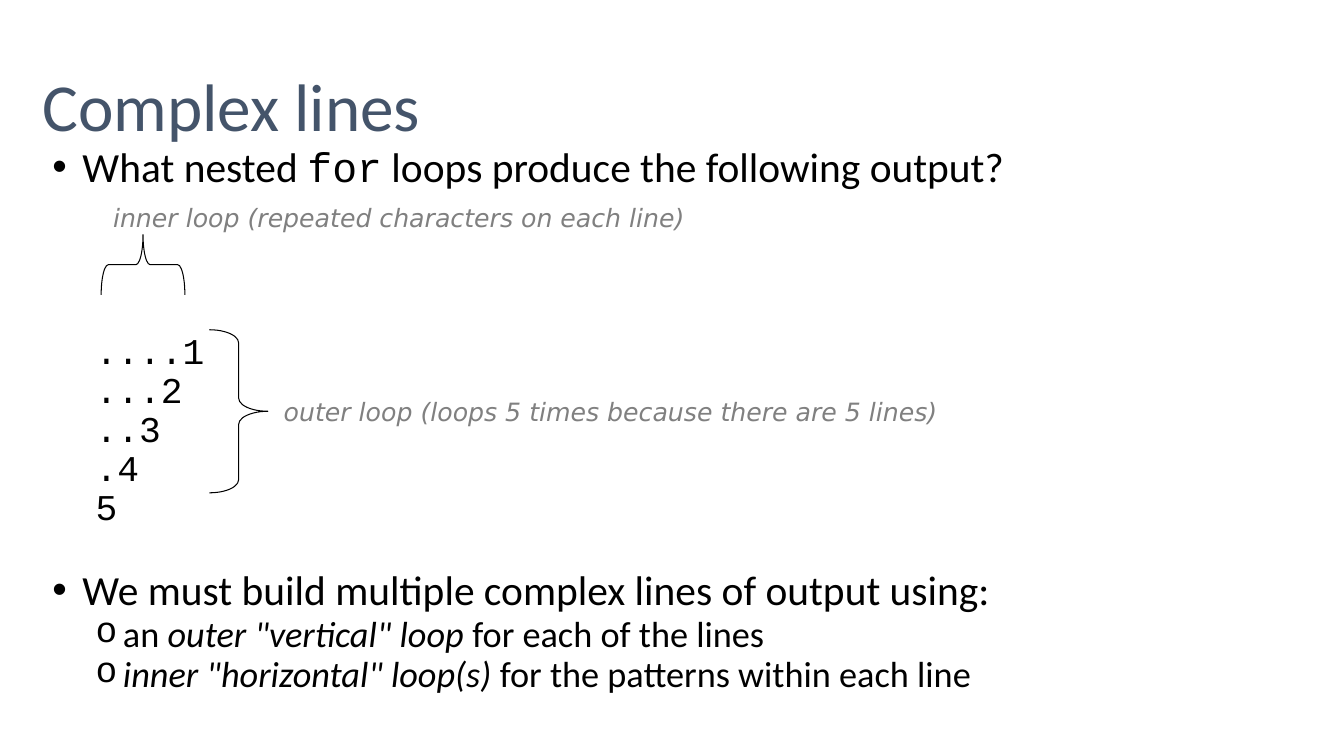
from dataclasses import dataclass

from lxml import etree
from pptx import Presentation
from pptx import util as u
from pptx.dml.color import RGBColor
from pptx.enum import shapes, text
from pptx.oxml.ns import qn


@dataclass(frozen=True)
class Theme:
    heading: RGBColor = RGBColor(0x44, 0x54, 0x6A)
    ink: RGBColor = RGBColor(0, 0, 0)
    note: RGBColor = RGBColor(0x80, 0x80, 0x80)
    body_font: str = "Calibri"
    code_font: str = "Courier New"
    note_font: str = "DejaVu Sans"
    title_size: float = 48
    bullet_size: float = 29.6
    detail_size: float = 25.9
    note_size: float = 18


THEME = Theme()


def add_text_frame(slide, left, top, width, height):
    frame = slide.shapes.add_textbox(
        u.Cm(left), u.Cm(top), u.Cm(width), u.Cm(height)).text_frame
    frame.word_wrap = True
    return frame


def style(paragraph, font, size, color):
    paragraph.font.name = font
    paragraph.font.size = u.Pt(size)
    paragraph.font.color.rgb = color


def set_indent(paragraph, margin, hanging, bullet=None, bullet_font="Arial"):
    properties = paragraph._p.get_or_add_pPr()
    properties.set("marL", str(u.Cm(margin)))
    properties.set("indent", str(-u.Cm(hanging)))
    # Bullet elements come before the default run properties
    marks = [("a:buNone", {})]
    if bullet:
        marks = [("a:buFont", {"typeface": bullet_font}), ("a:buChar", {"char": bullet})]
    defaults = properties.find(qn("a:defRPr"))
    for tag, attributes in marks:
        mark = etree.Element(qn(tag), attributes)
        if defaults is None:
            properties.append(mark)
        else:
            defaults.addprevious(mark)


def add_title(slide, left, top, width, height):
    frame = add_text_frame(slide, left, top, width, height)
    frame.margin_left = frame.margin_right = frame.margin_bottom = 0
    frame.vertical_anchor = text.MSO_ANCHOR.BOTTOM
    paragraph = frame.paragraphs[0]
    paragraph.text = "Complex lines"
    paragraph.line_spacing = 0.9
    style(paragraph, THEME.body_font, THEME.title_size, THEME.heading)


def add_body(slide, left, top, width, height):
    frame = add_text_frame(slide, left, top, width, height)

    def add_paragraph(runs, size, spacing, before, font=THEME.body_font):
        first = frame.paragraphs[0]
        paragraph = frame.add_paragraph() if first.runs else first
        style(paragraph, font, size, THEME.ink)
        paragraph.line_spacing = spacing
        paragraph.space_before = u.Pt(before)
        for words, look in runs:
            run = paragraph.add_run()
            run.text = words
            if look == "code":
                run.font.name = THEME.code_font
            elif look == "italic":
                run.font.italic = True
        return paragraph

    def add_bullet(runs, before):
        paragraph = add_paragraph(runs, THEME.bullet_size, 0.8, before)
        set_indent(paragraph, 0.76, 0.76, "•")

    def add_detail(runs):
        paragraph = add_paragraph(runs, THEME.detail_size, 0.8, 4)
        paragraph.level = 1
        set_indent(paragraph, 1.78, 0.69, "o", THEME.code_font)

    add_bullet([("What nested ", None), ("for", "code"),
                (" loops produce the following output?", None)], 0)

    # Program output: one dot fewer on each line
    for number in range(1, 6):
        paragraph = add_paragraph([("." * (5 - number) + str(number), None)],
                                  THEME.detail_size, 0.7,
                                  107 if number == 1 else 6, THEME.code_font)
        paragraph.level = 1
        set_indent(paragraph, 1.78, 0.69)

    add_bullet([("We must build multiple complex lines of output using:", None)], 34)
    add_detail([("an ", None), ('outer "vertical" loop', "italic"),
                (" for each of the lines", None)])
    add_detail([('inner "horizontal" loop(s)', "italic"),
                (" for the patterns within each line", None)])


def add_brace(slide, left, top, width, height, curve, rotation=0):
    brace = slide.shapes.add_shape(shapes.MSO_SHAPE.RIGHT_BRACE, u.Cm(left),
                                   u.Cm(top), u.Cm(width), u.Cm(height))
    brace.adjustments[0] = curve
    brace.adjustments[1] = 0.5
    brace.rotation = rotation
    brace.shadow.inherit = False
    brace.fill.background()
    brace.line.color.rgb = THEME.ink
    brace.line.width = u.Pt(0.75)


def add_note(slide, left, middle, width, words):
    height = 0.9
    frame = add_text_frame(slide, left, middle - height / 2, width, height)
    frame.margin_left = frame.margin_right = 0
    frame.margin_top = frame.margin_bottom = 0
    frame.vertical_anchor = text.MSO_ANCHOR.MIDDLE
    paragraph = frame.paragraphs[0]
    paragraph.text = words
    style(paragraph, THEME.note_font, THEME.note_size, THEME.note)
    paragraph.font.italic = True


def add_outer_loop(slide, left, top, width, height):
    add_brace(slide, left, top, width, height, 0.226)
    add_note(slide, left + width + 0.4, top + height / 2, 18,
             "outer loop (loops 5 times because there are 5 lines)")


def add_inner_loop(slide, left, top, width, height):
    # Turned a quarter, so the brace swaps width and height about its centre
    shift = (width - height) / 2
    add_brace(slide, left + shift, top - shift, height, width, 0.119, 270)
    add_note(slide, left + 0.3, top - 0.43, 16,
             "inner loop (repeated characters on each line)")


def main():
    presentation = Presentation()
    presentation.slide_width, presentation.slide_height = u.Cm(33.87), u.Cm(19.05)
    slide = presentation.slides.add_slide(presentation.slide_layouts[6])
    add_title(slide, 1.07, 0, 31.75, 3.68)
    add_body(slide, 1.07, 3.68, 31.75, 14.38)
    add_outer_loop(slide, 5.28, 8.31, 1.47, 4.11)
    add_inner_loop(slide, 2.55, 5.91, 2.11, 1.52)
    presentation.save("out.pptx")


if __name__ == "__main__":
    main()
